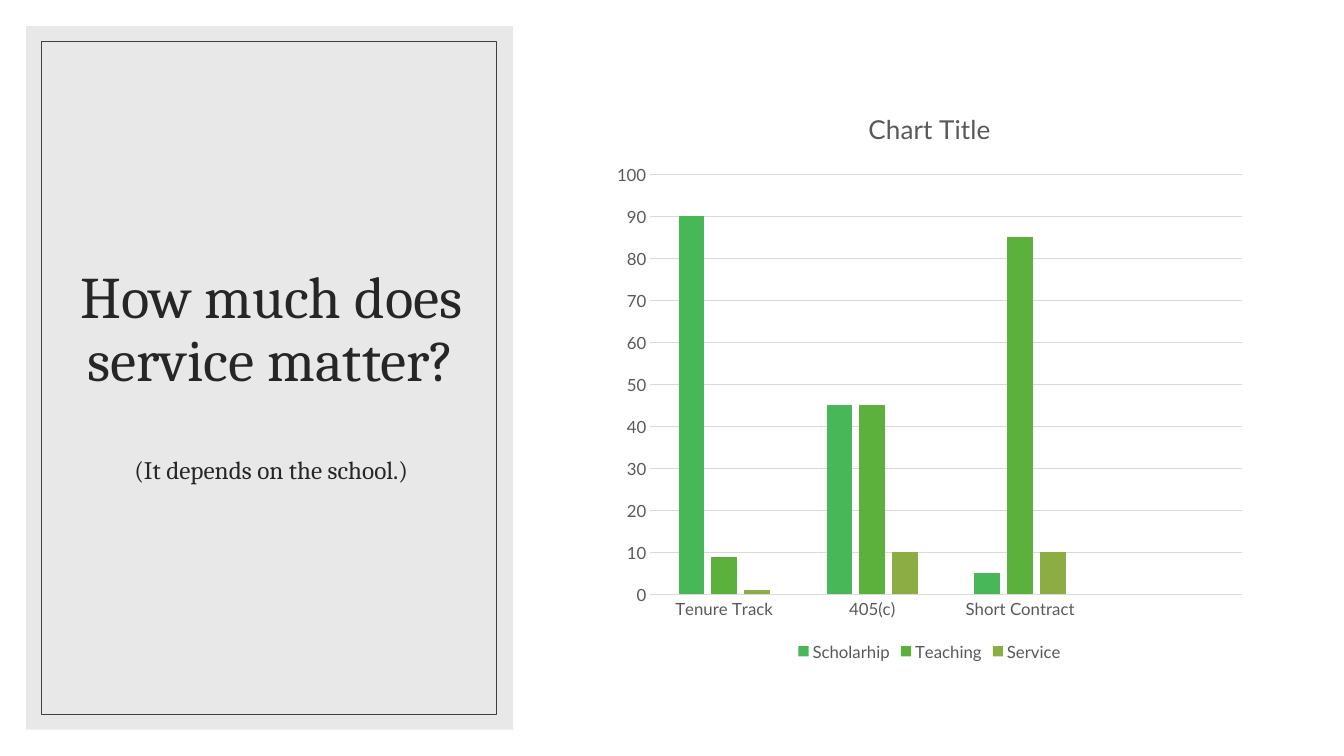
"""Build a slide with a framed question beside a clustered column chart."""
from lxml import etree
from pptx import Presentation
from pptx import util as u
from pptx.chart.data import CategoryChartData
from pptx.dml.color import RGBColor
from pptx.enum import chart as ch, shapes, text
from pptx.oxml import ns

WIDE, HIGH = 13.33, 7.5
EDGE, INSET = 0.26, 0.15
PANEL = (EDGE, EDGE, 4.83, HIGH - 2 * EDGE)
TITLE = (0.63, 0.61, 4.12, 6.24)
CHART = (5.99, 0.88, 6.46, 5.72)
LINES = [("How much does service matter?", 42, 0),
         ("(It depends on the school.)", 18, 45)]
HEAD = "Chart Title"
CATS = ["Tenure Track", "405(c)", "Short Contract", ""]

INK = RGBColor(0x26, 0x26, 0x26)
FRAME = RGBColor(0x40, 0x40, 0x40)
LABEL = RGBColor(0x59, 0x59, 0x59)
GREY = RGBColor(0xD9, 0xD9, 0xD9)
SERIES = [("Scholarhip", (90, 45, 5, None), RGBColor(0x48, 0xB7, 0x58)),
          ("Teaching", (9, 45, 85, None), RGBColor(0x5B, 0xB1, 0x3B)),
          ("Service", (1, 10, 10, None), RGBColor(0x8C, 0xAC, 0x44))]


def inch(box):
    return [u.Inches(n) for n in box]


def style(font, size, color, name):
    font.size, font.name, font.bold = u.Pt(size), name, False
    font.color.rgb = color


def rule(line):
    line.color.rgb, line.width = GREY, u.Pt(0.75)


def add_rect(slide, box):
    rect = slide.shapes.add_shape(shapes.MSO_SHAPE.RECTANGLE, *inch(box))
    rect.shadow.inherit = False
    return rect


def add_panel(slide):
    back = add_rect(slide, PANEL)
    back.fill.solid()
    back.fill.fore_color.rgb = GREY
    back.line.fill.background()
    tint = back.fill._xPr.find(".//" + ns.qn("a:srgbClr"))
    etree.SubElement(tint, ns.qn("a:alpha"), val="60000")
    left, top, wide, high = PANEL
    frame = add_rect(slide, (left + INSET, top + INSET,
                             wide - 0.32, high - 2 * INSET))
    frame.fill.background()
    frame.line.color.rgb, frame.line.width = FRAME, u.Pt(0.5)


def add_title(slide):
    body = slide.shapes.add_textbox(*inch(TITLE)).text_frame
    body.word_wrap = True
    body.vertical_anchor = text.MSO_ANCHOR.MIDDLE
    body.text = "\n".join(words for words, _, _ in LINES)
    for para, (_, size, gap) in zip(body.paragraphs, LINES):
        para.alignment = text.PP_ALIGN.CENTER
        para.line_spacing, para.space_before = 0.9, u.Pt(gap)
        style(para.runs[0].font, size, INK, "Cambria")


def add_chart(slide):
    data = CategoryChartData()
    data.categories = CATS
    for name, vals, _ in SERIES:
        data.add_series(name, vals)
    kind = ch.XL_CHART_TYPE.COLUMN_CLUSTERED
    chart = slide.shapes.add_chart(kind, *inch(CHART), data).chart
    style(chart.font, 12, LABEL, "Lato")
    chart.has_title = True
    head = chart.chart_title.text_frame
    head.text = HEAD
    style(head.paragraphs[0].runs[0].font, 18.6, LABEL, "Lato")
    chart.has_legend = True
    chart.legend.position = ch.XL_LEGEND_POSITION.BOTTOM
    chart.legend.include_in_layout = False
    style(chart.legend.font, 12, LABEL, "Lato")
    plot = chart.plots[0]
    plot.gap_width, plot.overlap = 219, -27
    plot.vary_by_categories = False
    for bar, (_, _, color) in zip(plot.series, SERIES):
        bar.format.fill.solid()
        bar.format.fill.fore_color.rgb = color
    cat, val = chart.category_axis, chart.value_axis
    for axis in (cat, val):
        axis.major_tick_mark = axis.minor_tick_mark = ch.XL_TICK_MARK.NONE
        style(axis.tick_labels.font, 12, LABEL, "Lato")
    rule(cat.format.line)
    val.minimum_scale, val.maximum_scale, val.major_unit = 0, 100, 10
    val.format.line.fill.background()
    rule(val.major_gridlines.format.line)


def main():
    deck = Presentation()
    deck.slide_width, deck.slide_height = inch((WIDE, HIGH))
    slide = deck.slides.add_slide(deck.slide_layouts[6])
    add_panel(slide)
    add_title(slide)
    add_chart(slide)
    deck.save("out.pptx")


if __name__ == "__main__":
    main()
